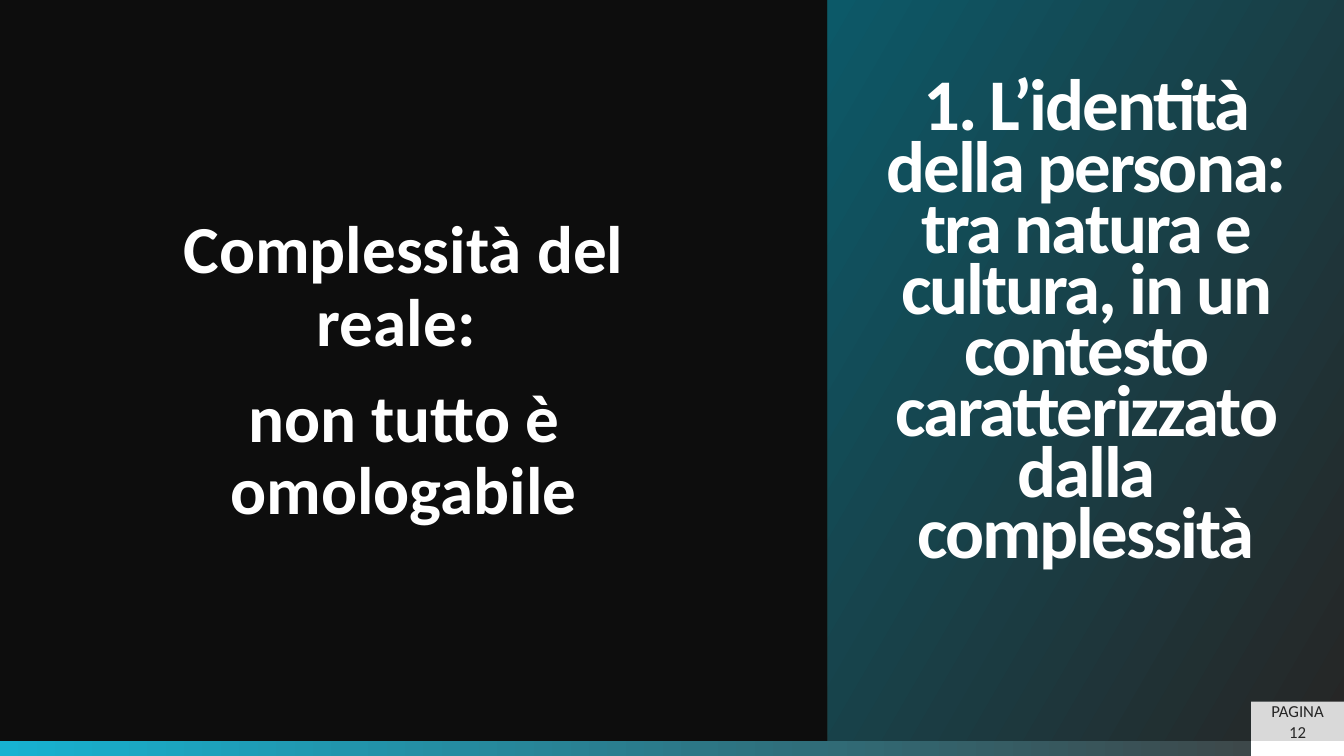
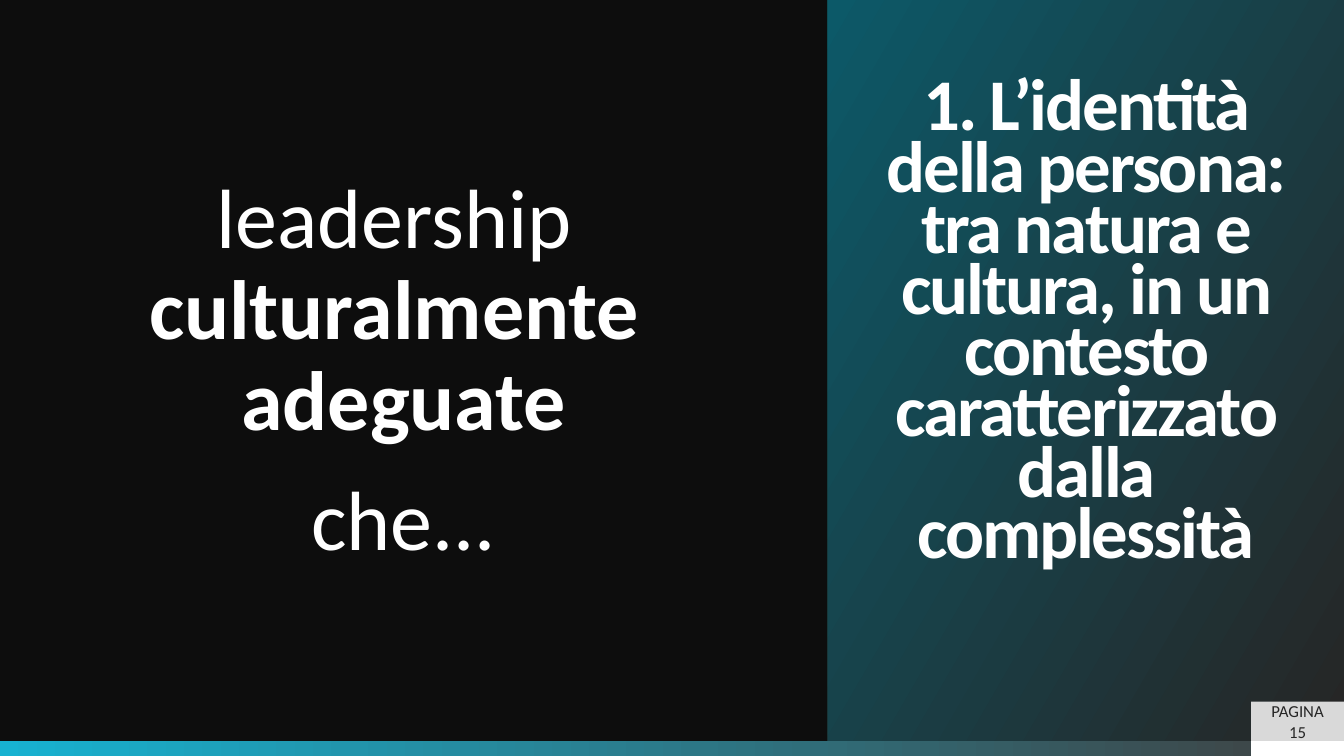
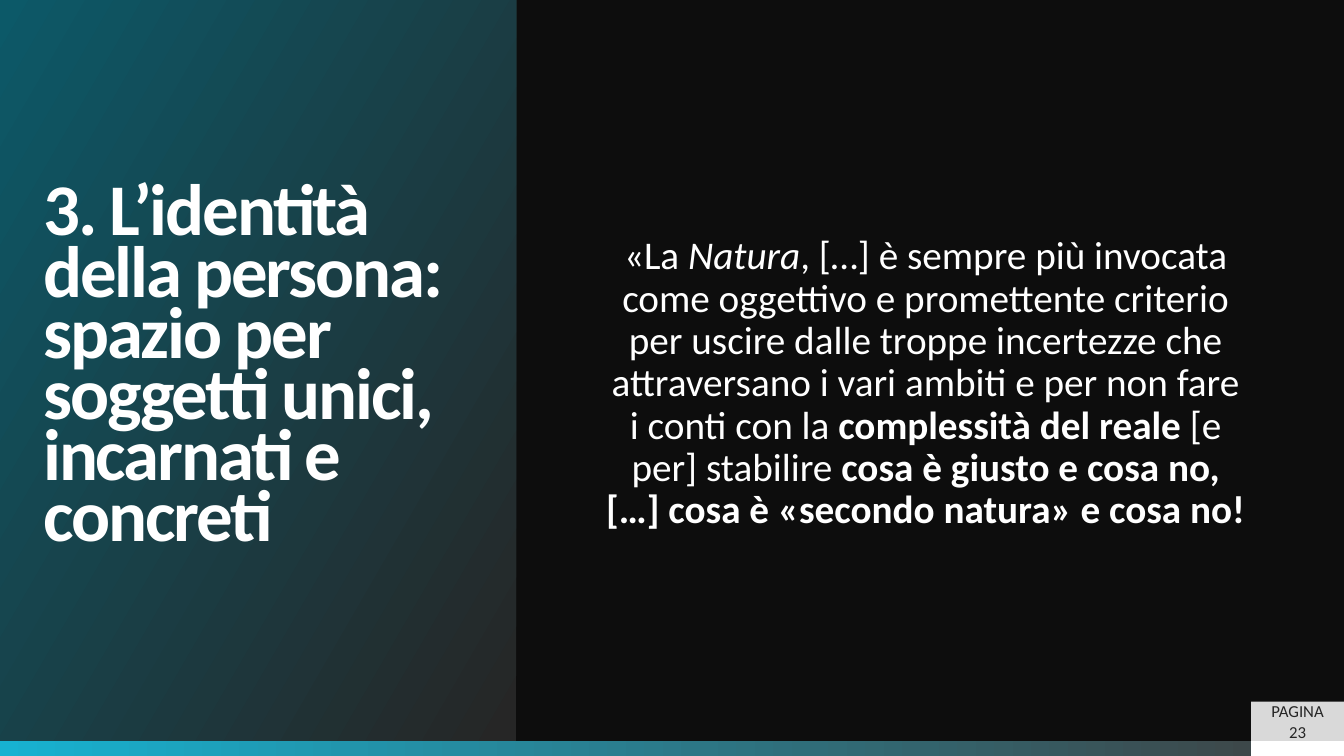
from dataclasses import dataclass

from pptx import Presentation
from pptx.dml.color import RGBColor
from pptx.enum import shapes, text
from pptx.util import Inches, Pt


@dataclass(frozen=True)
class Theme:
    font: str = "Calibri"
    back: str = "0D0D0D"
    white: str = "FFFFFF"
    dark: str = "262626"
    teal: str = "0C5968"
    cyan: str = "17B2D1"
    grey: str = "404040"
    tag: str = "D9D9D9"
    title_pt: int = 52
    tag_pt: int = 12


T = Theme()
W, H, BAND, TAG_W, TAG_H = 13.33, 7.5, 0.15, 0.92, 0.39
PANEL_W, PANEL_H = 5.12, H - BAND
CENTER, LEFT = text.PP_ALIGN.CENTER, text.PP_ALIGN.LEFT


def paint(sp, colors, angle=0, first=0):
    """Fill with one colour, or a gradient between two, and drop the outline."""
    if len(colors) == 1:
        sp.fill.solid()
        sp.fill.fore_color.rgb = RGBColor.from_string(colors[0])
    else:
        sp.fill.gradient()
        sp.fill.gradient_angle = angle
        for stop, color, pos in zip(sp.fill.gradient_stops, colors, (first, 1)):
            stop.color.rgb = RGBColor.from_string(color)
            stop.position = pos
    sp.line.fill.background()


def write(p, runs, size, color, align=CENTER, spacing=1.0):
    """Add (text, style) runs; style holds b and i, a newline breaks the line."""
    p.alignment = align
    p.line_spacing = spacing
    for words, style in runs:
        for n, line in enumerate(words.split("\n")):
            if n:
                p.add_line_break()
            r = p.add_run()
            r.text = line
            r.font.name, r.font.size = T.font, Pt(size)
            r.font.bold, r.font.italic = "b" in style, "i" in style
            r.font.color.rgb = RGBColor.from_string(color)


COMPLEXITY = ("1. L’identità della persona: tra natura e cultura, "
              "in un contesto caratterizzato dalla complessità")
SUBJECTS = "3. L’identità della persona:\nspazio per soggetti unici, incarnati e concreti"
RIGHT_PANEL = dict(title=COMPLEXITY, panel_x=W - PANEL_W, align=CENTER, bottom=0.92,
                   box=(0.91, 1.1, 6.19, 5.19), inset=0.19)
LEFT_PANEL = dict(title=SUBJECTS, panel_x=0, align=LEFT, bottom=0.05,
                  box=(5.78, 1.08, 6.8, 5.46), inset=0.21)

SLIDES = [
    dict(RIGHT_PANEL, page=12, size=48, body=[
        [("Complessità del reale: ", "b")],
        [("non tutto è omologabile", "b")],
    ]),
    dict(RIGHT_PANEL, page=15, size=60, body=[
        [("leadership \n", ""), ("culturalmente \nadeguate", "b")],
        [("che...", "")],
    ]),
    dict(LEFT_PANEL, page=23, size=28, body=[
        [("«La ", ""), ("Natura", "i"),
         (", […] è sempre più invocata come oggettivo e promettente criterio "
          "per uscire dalle troppe incertezze che attraversano i vari ambiti "
          "e per non fare i conti con la ", ""),
         ("complessità del reale ", "b"), ("[e per] stabilire ", ""),
         ("cosa è giusto e cosa no,\n[…] cosa è «secondo natura» e cosa no!", "b")],
    ]),
]

prs = Presentation()
prs.slide_width, prs.slide_height = Inches(W), Inches(H)
back = prs.slide_master.background.fill
back.solid()
back.fore_color.rgb = RGBColor.from_string(T.back)

for spec_ in SLIDES:
    s = prs.slides.add_slide(prs.slide_layouts.get_by_name("Title Only"))

    # Title panel
    title = s.shapes.title
    title.left, title.top = Inches(spec_["panel_x"]), Inches(0)
    title.width, title.height = Inches(PANEL_W), Inches(PANEL_H)
    paint(title, (T.dark, T.teal), angle=150, first=0.01)
    tf = title.text_frame
    tf.auto_size, tf.word_wrap = text.MSO_AUTO_SIZE.NONE, True
    tf.vertical_anchor = text.MSO_ANCHOR.MIDDLE
    tf.margin_left = tf.margin_right = Inches(0.43)
    tf.margin_top, tf.margin_bottom = Inches(0.05), Inches(spec_["bottom"])
    p = tf.paragraphs[0]
    write(p, [(spec_["title"], "b")], T.title_pt, T.white, spec_["align"], 0.7)
    for r in p.runs:
        r.font._element.set("spc", "-150")

    # Body text
    tf = s.shapes.add_textbox(*map(Inches, spec_["box"])).text_frame
    tf.word_wrap = True
    tf.vertical_anchor = text.MSO_ANCHOR.MIDDLE
    tf.margin_left = tf.margin_right = Inches(spec_["inset"])
    tf.margin_top = tf.margin_bottom = 0
    for n, runs in enumerate(spec_["body"]):
        p = tf.add_paragraph() if n else tf.paragraphs[0]
        write(p, runs, spec_["size"], T.white, spacing=0.9)
        p.space_after = Pt(round(0.35 * spec_["size"], 1))

    # Bottom band and page tag
    for x, y, w, h, colors in (
        (0, PANEL_H, W, BAND, (T.cyan, T.grey)),
        (W - TAG_W, PANEL_H, TAG_W, BAND, (T.white,)),
        (W - TAG_W, PANEL_H - TAG_H, TAG_W, TAG_H, (T.tag,)),
    ):
        sp = s.shapes.add_shape(shapes.MSO_SHAPE.RECTANGLE, *map(Inches, (x, y, w, h)))
        sp.shadow.inherit = False
        paint(sp, colors)
    tf = sp.text_frame
    tf.word_wrap = True
    tf.vertical_anchor = text.MSO_ANCHOR.MIDDLE
    write(tf.paragraphs[0], [(f"PAGINA {spec_['page']}", "")], T.tag_pt, T.dark)

prs.save("out.pptx")
